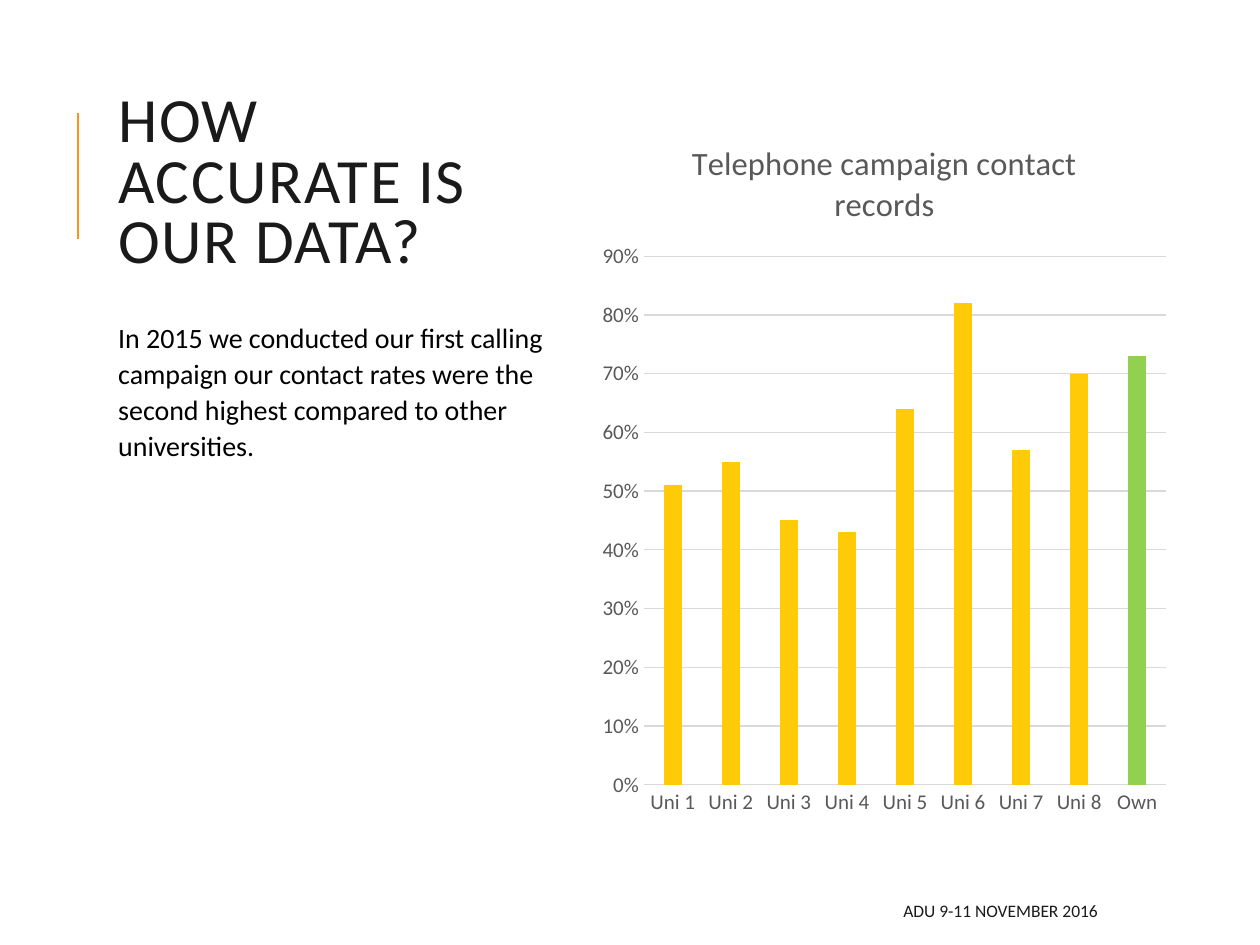
from lxml import etree
from pptx import Presentation
from pptx.chart.data import CategoryChartData
from pptx.dml.color import RGBColor
from pptx.enum.chart import XL_CHART_TYPE, XL_TICK_MARK
from pptx.enum.shapes import MSO_CONNECTOR
from pptx.enum.text import MSO_ANCHOR, PP_ALIGN
from pptx.oxml import parse_xml
from pptx.oxml.ns import nsdecls, qn
from pptx.util import Inches, Pt

FONT = "Calibri"
INK, GREY, GRID = "1A1A1A", "595959", "D9D9D9"
LEFT, COLUMN = 0.84, 3.6


def color(value):
    return RGBColor.from_string(value)


def add_text(page, area, text, size, ink, anchor=MSO_ANCHOR.TOP):
    """Add a wrapped text box and return its only paragraph."""
    box = page.shapes.add_textbox(*(Inches(length) for length in area))
    frame = box.text_frame
    frame.word_wrap = True
    frame.vertical_anchor = anchor
    frame.text = text
    para = frame.paragraphs[0]
    span = para.runs[0]
    span.font.name = FONT
    span.font.size = Pt(size)
    span.font.color.rgb = color(ink)
    return para


deck = Presentation()
deck.slide_width, deck.slide_height = Inches(10), Inches(7.5)
page = deck.slides.add_slide(deck.slide_layouts[6])

# Accent line beside the title
accent = page.shapes.add_connector(
    MSO_CONNECTOR.STRAIGHT, Inches(0.62), Inches(1.9), Inches(0.62), Inches(0.9))
accent.line.color.rgb = color("F8931D")
accent.line.width = Pt(1.5)
etree.SubElement(accent._element.spPr, qn("a:effectLst"))

# Left column and footer
title = add_text(page, (LEFT, 0.52, COLUMN, 1.9), "HOW ACCURATE IS OUR DATA?",
                 36, INK, MSO_ANCHOR.MIDDLE)
title.line_spacing = 0.8
title.runs[0].font._element.set("spc", "100")

body = add_text(
    page, (LEFT, 2.47, COLUMN, 4.11),
    "In 2015 we conducted our first calling campaign our contact rates were "
    "the second highest compared to other universities.", 16, "000000")
body.line_spacing = 1.08
body.space_before, body.space_after = Pt(6), Pt(2)

footer = add_text(page, (3.97, 7.08, 4.84, 0.3), "ADU 9-11 NOVEMBER 2016",
                  10, INK, MSO_ANCHOR.MIDDLE)
footer.alignment = PP_ALIGN.RIGHT

# Contact rate chart
rates = CategoryChartData(number_format="0%")
rates.categories = [f"Uni {number}" for number in range(1, 9)] + ["Own"]
rates.add_series("Series 1", [0.51, 0.55, 0.45, 0.43, 0.64, 0.82, 0.57, 0.7, 0.73])
chart = page.shapes.add_chart(
    XL_CHART_TYPE.COLUMN_CLUSTERED, Inches(4.69), Inches(0.9),
    Inches(4.66), Inches(5.67), rates).chart
chart.font.name = FONT
chart.font.size = Pt(10)
chart.has_legend = False

chart.has_title = True
heading = chart.chart_title.text_frame
heading.text = "Telephone campaign contact records"
heading_font = heading.paragraphs[0].runs[0].font
heading_font.name = FONT
heading_font.size = Pt(18.6)
heading_font.bold = False
heading_font.color.rgb = color(GREY)
chart.chart_title.include_in_layout = False

for axis in (chart.category_axis, chart.value_axis):
    axis.major_tick_mark = axis.minor_tick_mark = XL_TICK_MARK.NONE
    axis.tick_labels.font.name = FONT
    axis.tick_labels.font.size = Pt(12)
    axis.tick_labels.font.color.rgb = color(GREY)
chart.value_axis.minimum_scale = 0
chart.value_axis.maximum_scale = 0.9
chart.value_axis.major_unit = 0.1
chart.value_axis.tick_labels.number_format = "0%"
chart.value_axis.tick_labels.number_format_is_linked = False
chart.value_axis.format.line.fill.background()
for line in (chart.category_axis.format.line,
             chart.value_axis.major_gridlines.format.line):
    line.color.rgb = color(GRID)
    line.width = Pt(0.75)

plot = chart.plots[0]
plot.gap_width, plot.overlap = 219, -27
plot.vary_by_categories = False
bars = plot.series[0]
bars.format.fill.solid()
bars.format.fill.fore_color.rgb = color("FFCA08")
own_bar = bars.points[8].format.fill
own_bar.solid()
own_bar.fore_color.rgb = color("92D050")

# Plot area as shares of the chart's size
shares = {"x": 0.09, "y": 0.2, "w": 0.89, "h": 0.74}
layout = parse_xml(
    f'<c:layout {nsdecls("c")}><c:manualLayout><c:layoutTarget val="inner"/>'
    '<c:xMode val="edge"/><c:yMode val="edge"/>'
    + "".join(f'<c:{side} val="{share}"/>' for side, share in shares.items())
    + "</c:manualLayout></c:layout>")
plot_area = chart._chartSpace.chart.plotArea
for old_layout in plot_area.findall(qn("c:layout")):
    plot_area.remove(old_layout)
plot_area.insert(0, layout)

deck.save("out.pptx")
